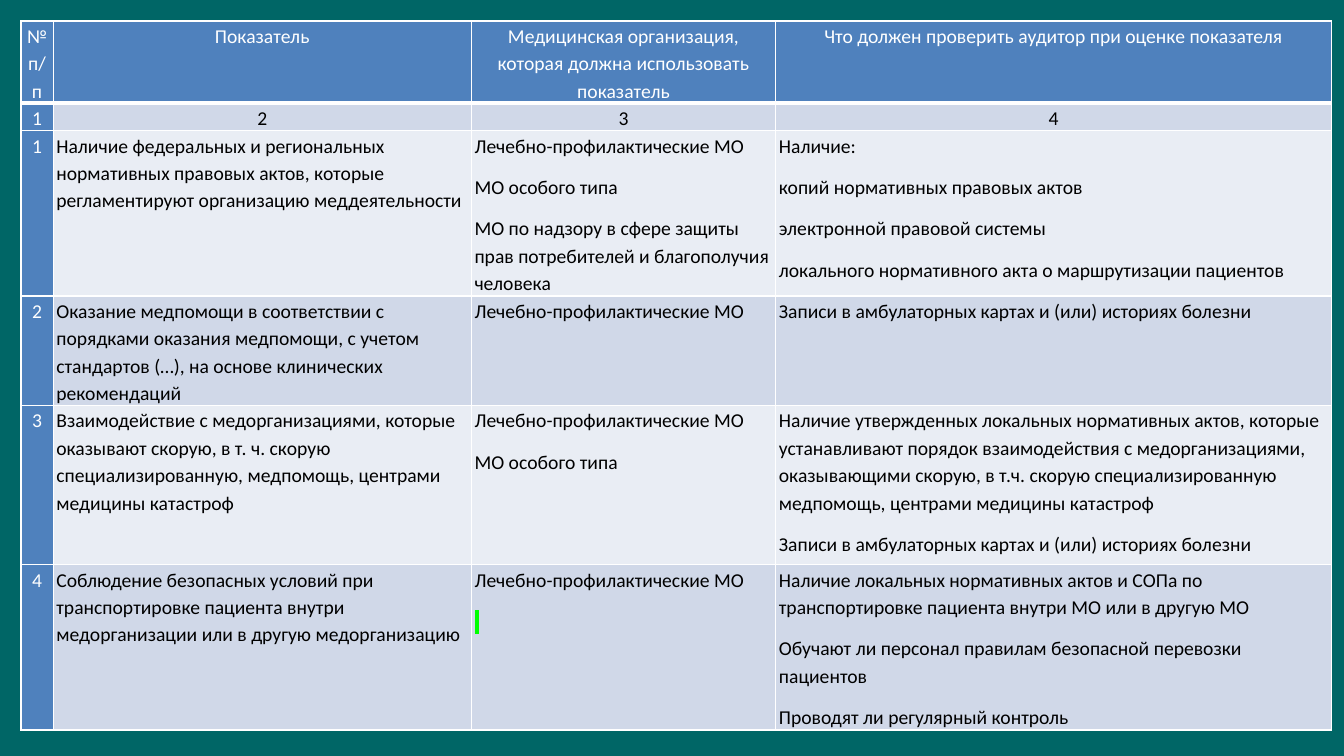
from dataclasses import dataclass

from lxml import etree
from pptx import Presentation
from pptx.dml.color import RGBColor
from pptx.enum.text import PP_ALIGN
from pptx.oxml.ns import qn
from pptx.util import Cm, Pt

CENTER = PP_ALIGN.CENTER
LEFT = PP_ALIGN.LEFT
FONT = "Calibri"
COLORS = {
    "background": "006666",
    "header": "4F81BD",
    "dark_band": "D0D8E8",
    "light_band": "E9EDF4",
    "border": "FFFFFF",
    "header_text": "FFFFFF",
    "body_text": "000000",
    "mark": "00FF00",
}
COLUMN_WIDTHS = (0.81, 10.54, 7.67, 14.0)
MARKED_SPACE = " "
CARE_PROVIDERS = "Лечебно-профилактические МО"
SPECIAL_PROVIDERS = "МО особого типа"
PATIENT_RECORDS = "Записи в амбулаторных картах и (или) историях болезни"


@dataclass
class CriterionRow:
    height: float
    cells: tuple[tuple[str, ...], ...]
    centered: bool = False


ROWS = (
    CriterionRow(1.6, (
        ("№ п/п",),
        ("Показатель",),
        ("Медицинская организация, которая должна использовать показатель",),
        ("Что должен проверить аудитор при оценке показателя",),
    ), True),
    CriterionRow(0.28, (("1",), ("2",), ("3",), ("4",)), True),
    CriterionRow(3.76, (
        ("1",),
        ("Наличие федеральных и региональных нормативных правовых актов, "
         "которые регламентируют организацию меддеятельности",),
        (CARE_PROVIDERS, SPECIAL_PROVIDERS,
         "МО по надзору в сфере защиты прав потребителей и благополучия человека"),
        ("Наличие:", "копий нормативных правовых актов",
         "электронной правовой системы",
         "локального нормативного акта о маршрутизации пациентов"),
    )),
    CriterionRow(2.26, (
        ("2",),
        ("Оказание медпомощи в соответствии с порядками оказания медпомощи, "
         "с учетом стандартов (…), на основе клинических рекомендаций",),
        (CARE_PROVIDERS,),
        (PATIENT_RECORDS,),
    )),
    CriterionRow(4.01, (
        ("3",),
        ("Взаимодействие с медорганизациями, которые оказывают скорую, в т. ч. "
         "скорую специализированную, медпомощь, центрами медицины катастроф",),
        (CARE_PROVIDERS, SPECIAL_PROVIDERS),
        ("Наличие утвержденных локальных нормативных актов, которые "
         "устанавливают порядок взаимодействия с медорганизациями, "
         "оказывающими скорую, в т.ч. скорую специализированную медпомощь, "
         "центрами медицины катастроф", PATIENT_RECORDS),
    )),
    CriterionRow(4.01, (
        ("4",),
        ("Соблюдение безопасных условий при транспортировке пациента внутри "
         "медорганизации или в другую медорганизацию",),
        (CARE_PROVIDERS, MARKED_SPACE),
        ("Наличие локальных нормативных актов и СОПа по транспортировке "
         "пациента внутри МО или в другую МО",
         "Обучают ли персонал правилам безопасной перевозки пациентов",
         "Проводят ли регулярный контроль"),
    )),
)


def rgb(name: str) -> RGBColor:
    return RGBColor.from_string(COLORS[name])


def add_solid_color(parent, name: str) -> None:
    fill = etree.SubElement(parent, qn("a:solidFill"))
    etree.SubElement(fill, qn("a:srgbClr"), val=COLORS[name])


def set_borders(cell, bottom_width: int) -> None:
    properties = cell._tc.get_or_add_tcPr()
    widths = {"a:lnL": 1, "a:lnR": 1, "a:lnT": 1, "a:lnB": bottom_width}
    for position, (side, width) in enumerate(widths.items()):
        line = etree.Element(qn(side), w=str(Pt(width)))
        add_solid_color(line, "border")
        properties.insert(position, line)


def highlight(run) -> None:
    properties = run._r.get_or_add_rPr()
    mark = etree.Element(qn("a:highlight"))
    etree.SubElement(mark, qn("a:srgbClr"), val=COLORS["mark"])
    properties.find(qn("a:solidFill")).addnext(mark)


def write_cell(cell, lines: tuple[str, ...], align, color: str) -> None:
    cell.margin_left = cell.margin_right = Cm(0.08)
    cell.margin_top = cell.margin_bottom = Cm(0)
    frame = cell.text_frame
    for index, line in enumerate(lines):
        paragraph = frame.add_paragraph() if index else frame.paragraphs[0]
        paragraph.alignment = align
        paragraph.line_spacing = 1.15
        paragraph.space_after = Pt(10)
        run = paragraph.add_run()
        run.text = line
        run.font.size = Pt(14)
        run.font.bold = False
        run.font.color.rgb = rgb(color)
        run.font.name = FONT
        if line == MARKED_SPACE:
            highlight(run)


def add_criteria_table(slide) -> None:
    frame = slide.shapes.add_table(
        len(ROWS), len(COLUMN_WIDTHS), Cm(0.53), Cm(0.53),
        Cm(sum(COLUMN_WIDTHS)), Cm(17.65))
    table = frame.table
    table.horz_banding = False
    for column, width in zip(table.columns, COLUMN_WIDTHS):
        column.width = Cm(width)

    for r, criterion in enumerate(ROWS):
        table.rows[r].height = Cm(criterion.height)
        band = "dark_band" if r % 2 else "light_band"
        for c, lines in enumerate(criterion.cells):
            cell = table.cell(r, c)
            is_header = r == 0 or c == 0
            cell.fill.solid()
            cell.fill.fore_color.rgb = rgb("header" if is_header else band)
            set_borders(cell, 3 if r == 0 else 1)
            write_cell(cell, lines,
                       CENTER if criterion.centered or c == 0 else LEFT,
                       "header_text" if is_header else "body_text")
    frame.height = Cm(17.65)


def main() -> None:
    presentation = Presentation()
    presentation.slide_width = Cm(33.87)
    presentation.slide_height = Cm(19.05)
    slide = presentation.slides.add_slide(presentation.slide_layouts[6])

    # Background
    slide.background.fill.solid()
    slide.background.fill.fore_color.rgb = rgb("background")

    # Audit criteria
    add_criteria_table(slide)
    presentation.save("out.pptx")


if __name__ == "__main__":
    main()
